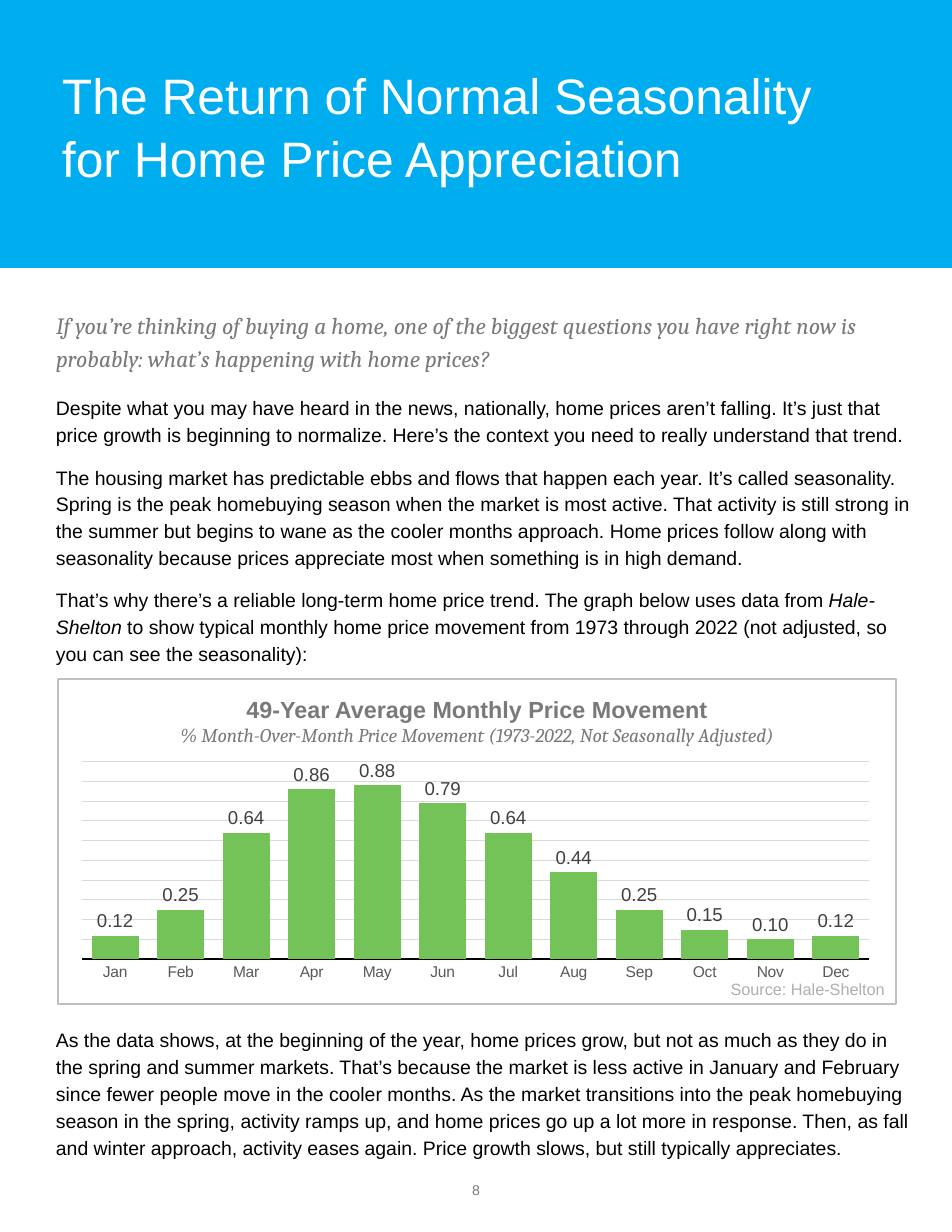
from pptx import Presentation
from pptx import util as u
from pptx.chart import data as chart_data
from pptx.dml import color as dml
from pptx.enum import chart as chart_enum
from pptx.enum import shapes, text
from pptx.oxml import parse_xml
from pptx.oxml.ns import nsdecls

COLORS = {"banner": "00AEEF", "bar": "73C359", "white": "FFFFFF", "black": "000000",
          "gray": "797979", "source": "AFAFAF", "frame": "BFBFBF", "grid": "D9D9D9",
          "month": "595959", "label": "404040"}
ALIGN = text.PP_ALIGN

TITLE = {"name": "Arial", "size": 32, "bold": False, "color": "white"}
INTRO = {"name": "Cambria", "size": 15, "italic": True, "color": "gray"}
BODY = {"name": "Arial", "size": 12.5, "color": "black"}
BODY_ITALIC = {**BODY, "italic": True}
HEADING = {"name": "Arial", "size": 15, "bold": True, "color": "gray"}
SUBHEADING = {"name": "Cambria", "size": 12.5, "italic": True, "color": "gray"}
SOURCE = {"name": "Arial", "size": 10.5, "color": "source"}
PAGE_NUMBER = {"name": "Arial", "size": 9, "color": "gray"}
MONTH = {"name": "Arial", "size": 10, "color": "month"}
VALUE = {"name": "Arial", "size": 12, "color": "label"}

INTRO_TEXT = ("If you’re thinking of buying a home, one of the biggest questions you have "
              "right now is probably: what’s happening with home prices?")
BODY_TEXT = [
    [("Despite what you may have heard in the news, nationally, home prices aren’t falling. "
      "It’s just that price growth is beginning to normalize. Here’s the context you need to "
      "really understand that trend.", BODY)],
    [("The housing market has predictable ebbs and flows that happen each year. It’s called "
      "seasonality. Spring is the peak homebuying season when the market is most active. That "
      "activity is still strong in the summer but begins to wane as the cooler months approach. "
      "Home prices follow along with seasonality because prices appreciate most when something "
      "is in high demand.", BODY)],
    [("That’s why there’s a reliable long-term home price trend. The graph below uses data "
      "from ", BODY), ("Hale-Shelton", BODY_ITALIC),
     (" to show typical monthly home price movement from 1973 through 2022 (not adjusted, so "
      "you can see the seasonality):", BODY)],
]
CLOSING_TEXT = (
    "As the data shows, at the beginning of the year, home prices grow, but not as much as they "
    "do in the spring and summer markets. That’s because the market is less active in January "
    "and February since fewer people move in the cooler months. As the market transitions into "
    "the peak homebuying season in the spring, activity ramps up, and home prices go up a lot "
    "more in response. Then, as fall and winter approach, activity eases again. Price growth "
    "slows, but still typically appreciates.")
MONTHS = "Jan Feb Mar Apr May Jun Jul Aug Sep Oct Nov Dec".split()
MOVEMENT = [0.12, 0.25, 0.64, 0.86, 0.88, 0.79, 0.64, 0.44, 0.25, 0.15, 0.10, 0.12]


def px(length):
    return u.Emu(round(length * 914400 / 112))


def rgb(name):
    return dml.RGBColor.from_string(COLORS[name])


def apply(target, values):
    for name, value in values.items():
        setattr(target, name, value)


def format_font(font, values):
    for name, value in values.items():
        if name == "color":
            font.color.rgb = rgb(value)
        else:
            setattr(font, name, u.Pt(value) if name == "size" else value)


def place(shape, box):
    apply(shape, dict(zip(("left", "top", "width", "height"), map(px, box))))


def add_text(slide, box, paragraphs, spacing=1.0, after=0, align=ALIGN.LEFT, **frame_format):
    frame = slide.shapes.add_textbox(*map(px, box)).text_frame
    apply(frame, {"word_wrap": True, "margin_left": 0, "margin_top": 0,
                  "margin_right": 0, "margin_bottom": 0, **frame_format})
    for index, runs in enumerate(paragraphs):
        paragraph = frame.add_paragraph() if index else frame.paragraphs[0]
        apply(paragraph, {"alignment": align, "line_spacing": spacing,
                          "space_after": u.Pt(after)})
        for words, values in runs:
            run = paragraph.add_run()
            run.text = words
            format_font(run.font, values)


def add_banner(slide, box):
    title = slide.shapes.title
    place(title, box)
    title.fill.solid()
    title.fill.fore_color.rgb = rgb("banner")
    frame = title.text_frame
    frame.text = "The Return of Normal Seasonality\vfor Home Price Appreciation"
    apply(frame, {"margin_left": px(62), "margin_right": px(62), "margin_top": px(62),
                  "margin_bottom": 0, "vertical_anchor": text.MSO_ANCHOR.TOP,
                  "auto_size": text.MSO_AUTO_SIZE.NONE, "word_wrap": True})
    paragraph = frame.paragraphs[0]
    apply(paragraph, {"alignment": ALIGN.LEFT, "line_spacing": 1.05, "space_before": u.Pt(0)})
    for run in paragraph.runs:
        format_font(run.font, TITLE)


def add_chart(slide, box):
    data = chart_data.CategoryChartData(number_format="0.00")
    data.categories = MONTHS
    data.add_series("Series 1", MOVEMENT)
    chart = slide.shapes.add_chart(
        chart_enum.XL_CHART_TYPE.COLUMN_CLUSTERED, *map(px, box), data).chart
    apply(chart, {"has_legend": False, "has_title": False})
    format_font(chart.font, MONTH)

    plot = chart.plots[0]
    apply(plot, {"gap_width": 40, "overlap": -27, "vary_by_categories": False,
                 "has_data_labels": True})
    apply(plot.data_labels, {"show_value": True, "number_format": "0.00",
                             "number_format_is_linked": False,
                             "position": chart_enum.XL_LABEL_POSITION.OUTSIDE_END})
    format_font(plot.data_labels.font, VALUE)
    fill = plot.series[0].format.fill
    fill.solid()
    fill.fore_color.rgb = rgb("bar")

    months = chart.category_axis
    months.major_tick_mark = chart_enum.XL_TICK_MARK.NONE
    format_font(months.tick_labels.font, MONTH)
    values = chart.value_axis
    apply(values, {"minimum_scale": 0, "maximum_scale": 1, "major_unit": 0.1,
                   "has_major_gridlines": True, "visible": False})
    for line, color, width in ((months.format.line, "black", 1.5),
                               (values.major_gridlines.format.line, "grid", 0.75)):
        line.color.rgb = rgb(color)
        line.width = u.Pt(width)

    area = chart.element.find(".//{*}plotArea")
    for old in area.findall("{*}layout"):
        area.remove(old)
    settings = "".join(f'<c:{tag} val="{value}"/>' for tag, value in (
        ("layoutTarget", "inner"), ("xMode", "edge"), ("yMode", "edge"),
        ("x", 0.02), ("y", 0.02), ("w", 0.96), ("h", 0.86)))
    area.insert(0, parse_xml(f'<c:layout {nsdecls("c")}><c:manualLayout>{settings}'
                             '</c:manualLayout></c:layout>'))


def add_chart_panel(slide, box):
    left, top, width, height = box
    frame = slide.shapes.add_shape(shapes.MSO_SHAPE.RECTANGLE, *map(px, box))
    frame.shadow.inherit = False
    frame.fill.background()
    frame.line.color.rgb = rgb("frame")
    frame.line.width = u.Pt(1)
    add_text(slide, (left + 18, top + 16, width - 36, 51),
             [[("49-Year Average Monthly Price Movement", HEADING)],
              [("% Month-Over-Month Price Movement (1973-2022, Not Seasonally Adjusted)",
                SUBHEADING)]], align=ALIGN.CENTER)
    add_text(slide, (left + width - 211, top + 300, 200, 20),
             [[("Source: Hale-Shelton", SOURCE)]], align=ALIGN.RIGHT)
    add_chart(slide, (left + 8, top + 78, width - 19, 230))


def add_article(slide, box):
    left, top, width, height = box
    add_text(slide, (left, top, width - 14, 70), [[(INTRO_TEXT, INTRO)]], 1.17, 10)
    add_text(slide, (left, top + 86, width, 275), BODY_TEXT, 1.15, 10)
    add_chart_panel(slide, (left + 2, top + 372, 838, 325))
    add_text(slide, (left, top + 718, width, height - 718), [[(CLOSING_TEXT, BODY)]], 1.15)


def main():
    presentation = Presentation()
    apply(presentation, {"slide_width": px(952), "slide_height": px(1232)})
    slide = presentation.slides.add_slide(presentation.slide_layouts[5])
    add_banner(slide, (0, 0, 952, 268))
    add_article(slide, (56, 307, 855, 850))
    add_text(slide, (422, 1148, 108, 84), [[("8", PAGE_NUMBER)]], align=ALIGN.CENTER,
             vertical_anchor=text.MSO_ANCHOR.MIDDLE)
    presentation.save("out.pptx")


if __name__ == "__main__":
    main()
